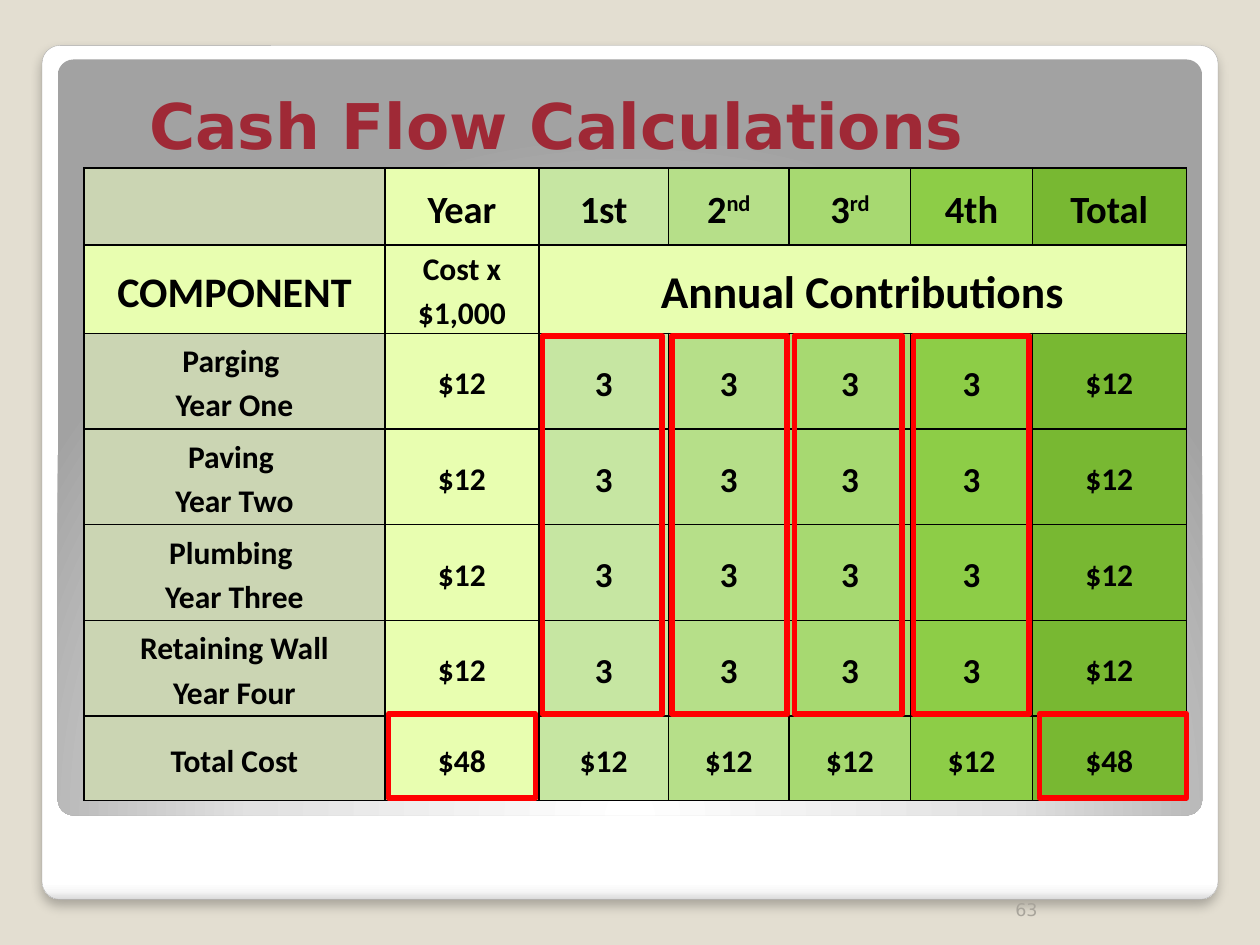
import pptx
import pptx.util
import pptx.oxml
import pptx.oxml.ns
import pptx.dml.color
import pptx.enum.shapes
import pptx.enum.text

Pt = pptx.util.Pt
RGB = pptx.dml.color.RGBColor.from_string
qn = pptx.oxml.ns.qn
KIND = pptx.enum.shapes.MSO_SHAPE
ALIGN = pptx.enum.text.PP_ALIGN
ANCHOR = pptx.enum.text.MSO_ANCHOR

# Content: a tuple in a cell is a base with its superscript
TITLE = "Cash Flow Calculations"
NUMBER = "63"
TASKS = ["Parging \nYear One", "Paving \nYear Two",
         "Plumbing \nYear Three", "Retaining Wall\nYear Four"]
ROWS = [
    ["", "Year", "1st", ("2", "nd"), ("3", "rd"), "4th", "Total"],
    ["COMPONENT", "Cost x $1,000", "Annual Contributions", "", "", "", ""],
    *[[task, "$12", "3", "3", "3", "3", "$12"] for task in TASKS],
    ["Total Cost", "$48", "$12", "$12", "$12", "$12", "$48"],
]

# Theme
THEME = {
    "head": "DejaVu Sans", "body": "Calibri",
    "back": "E3DED1", "title": "9F2936", "number": "A8A49B",
    "ink": "000000", "edge": "A4A4A4", "frame": "FF0000", "band": "E8FEB0",
    "cols": ["CBD5B3", "E8FEB0", "C6E6A2", "B6DF89", "A7D971", "8DCD47",
             "78B832"],
    "card": [(0, "FFFFFF"), (98, "FFFFFF"), (99, "F7F7F7"), (100, "DADADA")],
    "panel": [(0, "FFFFFF"), (55, "E1E1E1"), (100, "A2A2A2")],
    "sizes": {"title": 36, "number": 10, "top": 22, "group": 24, "span": 26,
              "share": 20, "cell": 18},
}
SIZES = THEME["sizes"]

# Layout in points
CARD = (24, 26, 672, 488)
PANEL = (33, 34, 654, 432)
HEAD = (78, 30, 498, 66)
FOOT = (462, 492, 138, 37.5)
GRID = (48, 96)
WIDTHS = [172, 88, 74, 69, 69.5, 69.5, 88]
HEIGHTS = [44, 50.5, 54.7, 54.7, 54.7, 54.7, 48.3]
SHARES = [(310, 68.5), (384, 66), (454, 61.5), (522, 66)]
TOTALS = [222, 594]
FRAMES = [(left, 192, width, 216) for left, width in SHARES]
FRAMES += [(left, 408, 84, 48) for left in TOTALS]


def node(text):
    return pptx.oxml.parse_xml(text.replace(
        ">", f' {pptx.oxml.ns.nsdecls("a")}>', 1))


def shape(kind, box):
    item = slide.shapes.add_shape(kind, *map(Pt, box))
    item.shadow.inherit = False
    return item


def rounded(box, stops, path):
    item = shape(KIND.ROUNDED_RECTANGLE, box)
    item.adjustments[0] = 0.021
    marks = "".join(f'<a:gs pos="{at * 1000}"><a:srgbClr val="{color}"/></a:gs>'
                    for at, color in stops)
    geom = item.element.spPr.find(qn("a:prstGeom"))
    geom.addnext(node(f"<a:gradFill><a:gsLst>{marks}</a:gsLst>{path}</a:gradFill>"))
    title.element.addprevious(item.element)
    return item


def style(para, face, size, color, bold=False):
    para.font.name = face
    para.font.size = Pt(size)
    para.font.bold = bold
    para.font.color.rgb = RGB(color)


def rank(row, col):
    if row == 0:
        return "top"
    if row == 1:
        return ("group", "cell", "span")[min(col, 2)]
    return "share" if row < 6 and 2 <= col <= 5 else "cell"


def border(cell):
    props = cell._tc.get_or_add_tcPr()
    for spot, side in enumerate(("lnL", "lnR", "lnT", "lnB")):
        props.insert(spot, node(
            f'<a:{side} w="12700"><a:solidFill><a:srgbClr val="{THEME["ink"]}"/>'
            f"</a:solidFill></a:{side}>"))


def fill_cell(cell, text, row, col):
    cell.fill.solid()
    cell.fill.fore_color.rgb = RGB(THEME["band" if row == 1 else "cols"]
                                   if row == 1 else THEME["cols"][col])
    cell.vertical_anchor = ANCHOR.MIDDLE
    cell.margin_left = cell.margin_right = Pt(5)
    cell.margin_top = cell.margin_bottom = 0
    border(cell)
    if isinstance(text, tuple):
        para = cell.text_frame.paragraphs[0]
        for part in text:
            run = para.add_run()
            run.text = part
        run.font._element.set("baseline", "30000")
    else:
        cell.text = text
    for para in cell.text_frame.paragraphs:
        para.alignment = ALIGN.CENTER
        para.line_spacing = 1.15
        style(para, THEME["body"], SIZES[rank(row, col)], THEME["ink"], True)


# Slide and title
deck = pptx.Presentation()
deck.slide_width, deck.slide_height = Pt(720), Pt(540)
slide = deck.slides.add_slide(deck.slide_layouts[5])
slide.background.fill.solid()
slide.background.fill.fore_color.rgb = RGB(THEME["back"])
title = slide.shapes.title
title.left, title.top, title.width, title.height = map(Pt, HEAD)
title.text = TITLE
title.text_frame.vertical_anchor = ANCHOR.BOTTOM
title.text_frame.paragraphs[0].alignment = ALIGN.LEFT
style(title.text_frame.paragraphs[0], THEME["head"], SIZES["title"],
      THEME["title"], True)

# Card and panel behind the title
card = rounded(CARD, THEME["card"], '<a:lin ang="5400000" scaled="0"/>')
card.line.color.rgb = RGB(THEME["edge"])
card.line.width = Pt(0.16)
card.element.spPr.find(qn("a:effectLst")).append(node(
    f'<a:outerShdw blurRad="{Pt(6)}" dist="{Pt(4)}" dir="5400000">'
    f'<a:srgbClr val="{THEME["ink"]}"><a:alpha val="25000"/></a:srgbClr>'
    "</a:outerShdw>"))
panel = rounded(PANEL, THEME["panel"],
                '<a:path path="circle"><a:fillToRect l="50000" t="175000" '
                'r="50000" b="-75000"/></a:path>')
panel.line.fill.background()

# Slide number
foot = slide.shapes.add_textbox(*map(Pt, FOOT)).text_frame
foot.word_wrap = True
foot.vertical_anchor = ANCHOR.BOTTOM
foot.text = NUMBER
foot.paragraphs[0].alignment = ALIGN.RIGHT
style(foot.paragraphs[0], THEME["head"], SIZES["number"], THEME["number"])

# Cash flow table
table = slide.shapes.add_table(len(ROWS), len(WIDTHS), *map(Pt, GRID),
                               Pt(sum(WIDTHS)), Pt(sum(HEIGHTS))).table
for column, width in zip(table.columns, WIDTHS):
    column.width = Pt(width)
for line, height in zip(table.rows, HEIGHTS):
    line.height = Pt(height)
for row, texts in enumerate(ROWS):
    for col, text in enumerate(texts):
        fill_cell(table.cell(row, col), text, row, col)
table.cell(1, 2).merge(table.cell(1, 6))

# Red frames around shares and totals
for box in FRAMES:
    frame = shape(KIND.RECTANGLE, box)
    frame.fill.background()
    frame.line.color.rgb = RGB(THEME["frame"])
    frame.line.width = Pt(3.35)

deck.save("out.pptx")
